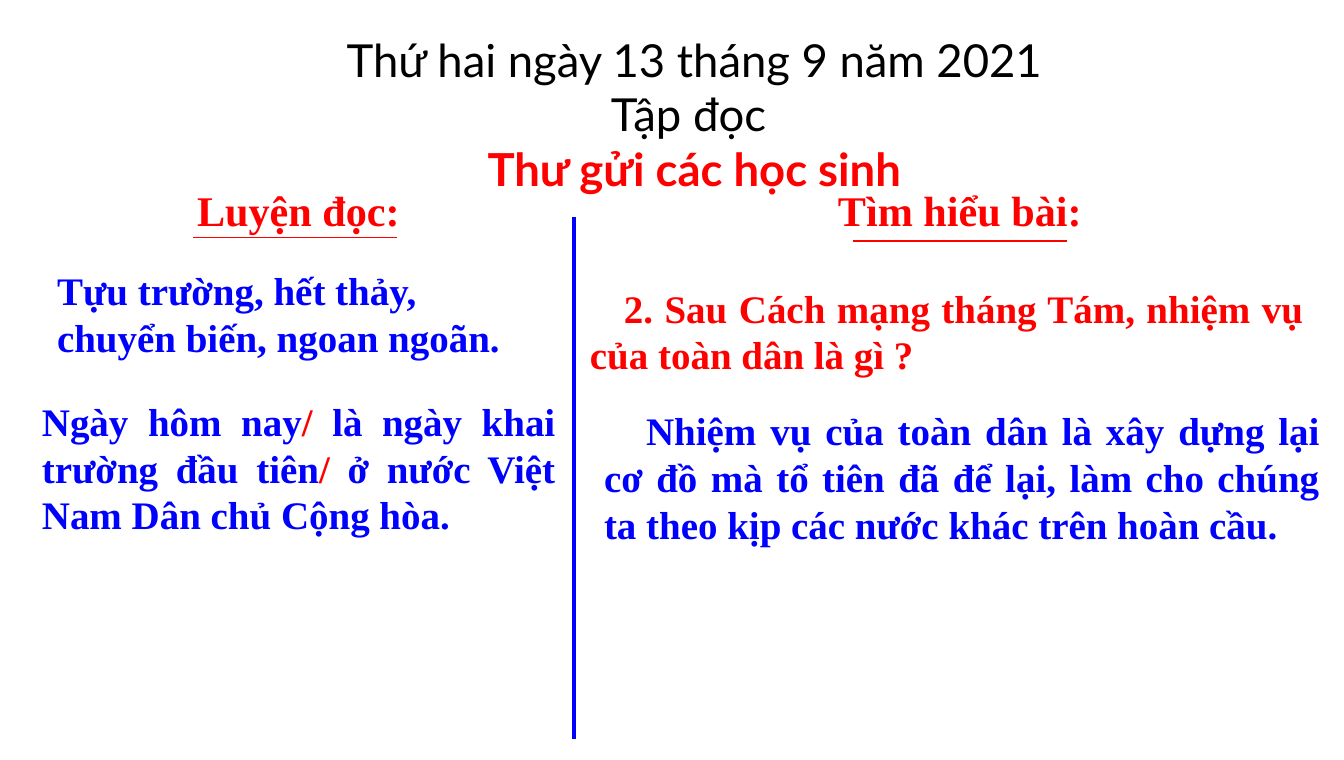
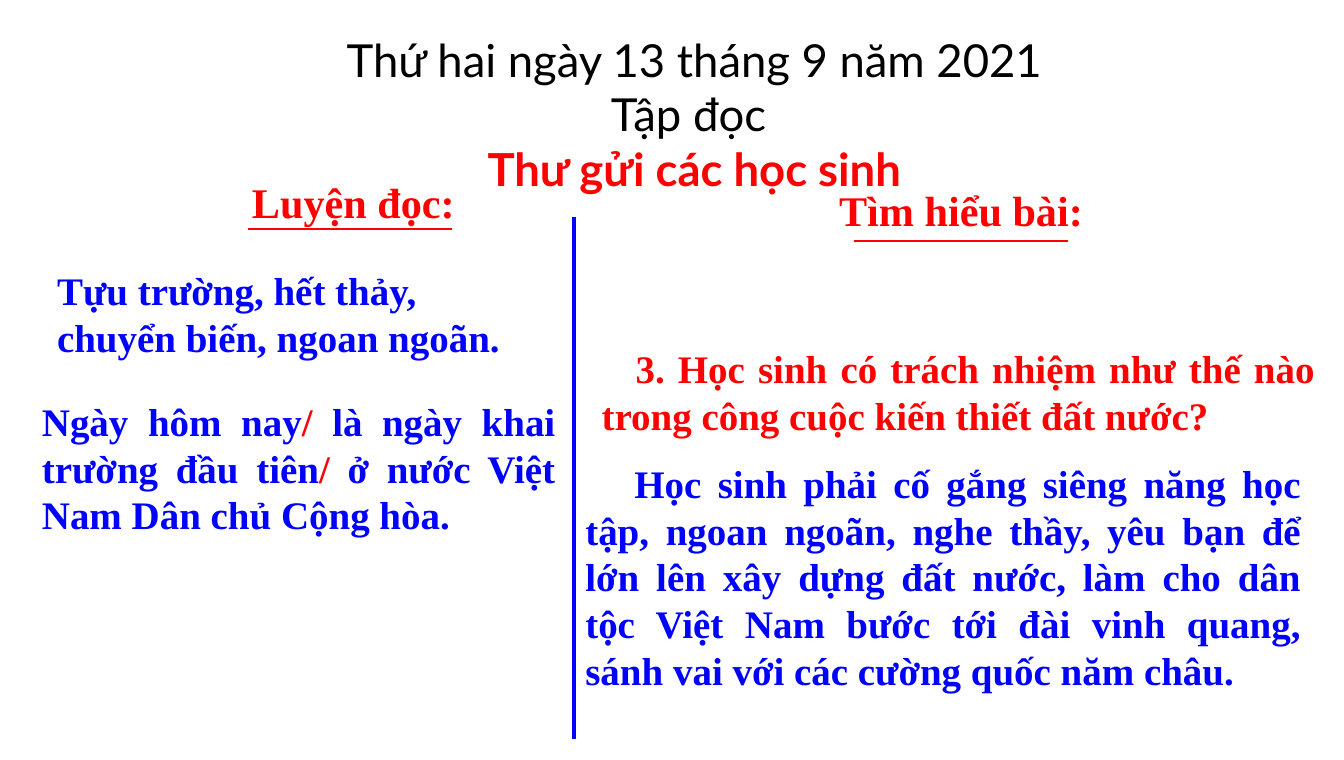
from itertools import cycle

from lxml.etree import SubElement
from pptx import Presentation
from pptx.dml.color import RGBColor
from pptx.enum.shapes import MSO_CONNECTOR as CONN
from pptx.enum.text import MSO_ANCHOR as ANCHOR, MSO_AUTO_SIZE as FIT, PP_ALIGN as AL
from pptx.oxml.ns import qn
from pptx.util import Inches, Pt

BLACK = RGBColor(0, 0, 0)
RED = RGBColor(255, 0, 0)
BLUE = RGBColor(0, 0, 255)
SERIF = "Times New Roman"
SANS = "Lato"
COLS, ROWS = 115, 65
TITLE = "Thứ hai ngày 13 tháng 9 năm 2021\nTập đọc \nThư gửi các học sinh"
WORDS = "Tựu trường, hết thảy, chuyển biến, ngoan ngoãn."
SENTENCE = ["Ngày hôm nay", "/ ", "là ngày khai trường đầu tiên", "/ ",
            "ở nước Việt Nam Dân chủ Cộng hòa."]


class Lesson:
    def __init__(self):
        self.prs = Presentation()
        self.prs.slide_width, self.prs.slide_height = Inches(11.5), Inches(6.5)
        self.s = None

    def x(self, cols):
        return round(self.prs.slide_width * cols / COLS)

    def y(self, rows):
        return round(self.prs.slide_height * rows / ROWS)

    def box(self, left, top, width, height):
        return self.x(left), self.y(top), self.x(width), self.y(height)

    def style(self, r, size, color, font=SERIF, bold=True):
        r.font.size, r.font.name, r.font.bold = Pt(size), font, bold
        r.font.color.rgb = color

    def title(self, text):
        sp = self.s.shapes.title
        sp.left, sp.top, sp.width, sp.height = self.box(11.5, 2.2, 95.8, 15.1)
        tf = sp.text_frame
        tf.text = text
        tf.auto_size, tf.vertical_anchor = FIT.NONE, ANCHOR.TOP
        for p in tf.paragraphs:
            last = p.text == tf.paragraphs[-1].text
            p.alignment = AL.CENTER
            for r in p.runs:
                self.style(r, 28, RED if last else BLACK, SANS, last)

    def text(self, parts, at, colors, size=24, align=AL.JUSTIFY, indent=0):
        sp = self.s.shapes.add_textbox(*self.box(*at))
        tf = sp.text_frame
        tf.word_wrap = True
        p = tf.paragraphs[0]
        p.alignment = align
        if indent:
            p._p.get_or_add_pPr().set("indent", str(self.x(indent)))
        for part, color in zip(parts, cycle(colors)):
            r = p.add_run()
            r.text = part
            self.style(r, size, color)

    def line(self, x1, y1, x2, y2, color, width):
        ln = self.s.shapes.add_connector(
            CONN.STRAIGHT, self.x(x1), self.y(y1), self.x(x2), self.y(y2))
        ln.line.color.rgb, ln.line.width = color, Pt(width)
        SubElement(ln._element.spPr, qn("a:effectLst"))

    def heading(self, text, left, top, width, start, length, drop):
        self.text([text], (left, top, width, 5.4), [RED], 26, AL.CENTER)
        self.line(left + start, top + drop, left + start + length, top + drop, RED, 1)

    def slide(self, reading_at, meaning_left):
        self.s = self.prs.slides.add_slide(self.prs.slide_layouts[5])
        self.title(TITLE)
        self.line(49.1, 18.6, 49.1, 63.2, BLUE, 2.25)
        self.heading("Luyện đọc:", *reading_at, 20.9, 1.4, 17.45, 5)
        self.heading("Tìm hiểu bài:", meaning_left, 15.3, 25.9, 3.8, 18.3, 5.3)
        self.text([WORDS], (3.9, 22.3, 43.3, 9.1), [BLUE], align=AL.LEFT)
        self.text(SENTENCE, (2.6, 33.5, 45.9, 13.1), [BLUE, RED])


def main():
    deck = Lesson()
    deck.slide((15.1, 15.3), 69.2)
    deck.text(["2. Sau Cách mạng tháng Tám, nhiệm vụ của toàn dân là gì ?"],
              (49.5, 23.8, 63, 9.1), [RED], indent=2.9)
    deck.text(["Nhiệm vụ của toàn dân là xây dựng lại cơ đồ mà tổ tiên đã để lại, "
               "làm cho chúng ta theo kịp các nước khác trên hoàn cầu."],
              (50.7, 34.3, 63.2, 13.1), [BLUE], indent=3.6)

    deck.slide((19.8, 14.6), 69.3)
    deck.text(["3. Học sinh có trách nhiệm như thế nào trong công cuộc "
               "kiến thiết đất nước?"],
              (50.5, 29, 63, 9.1), [RED], indent=2.9)
    deck.text(["Học sinh phải cố gắng siêng năng học tập, ngoan ngoãn, nghe thầy, "
               "yêu bạn để lớn lên xây dựng đất nước, làm cho dân tộc Việt Nam "
               "bước tới đài vinh quang, sánh vai với các cường quốc năm châu."],
              (49.1, 38.8, 63.2, 21.2), [BLUE], indent=4.2)
    deck.prs.save("out.pptx")


if __name__ == "__main__":
    main()
